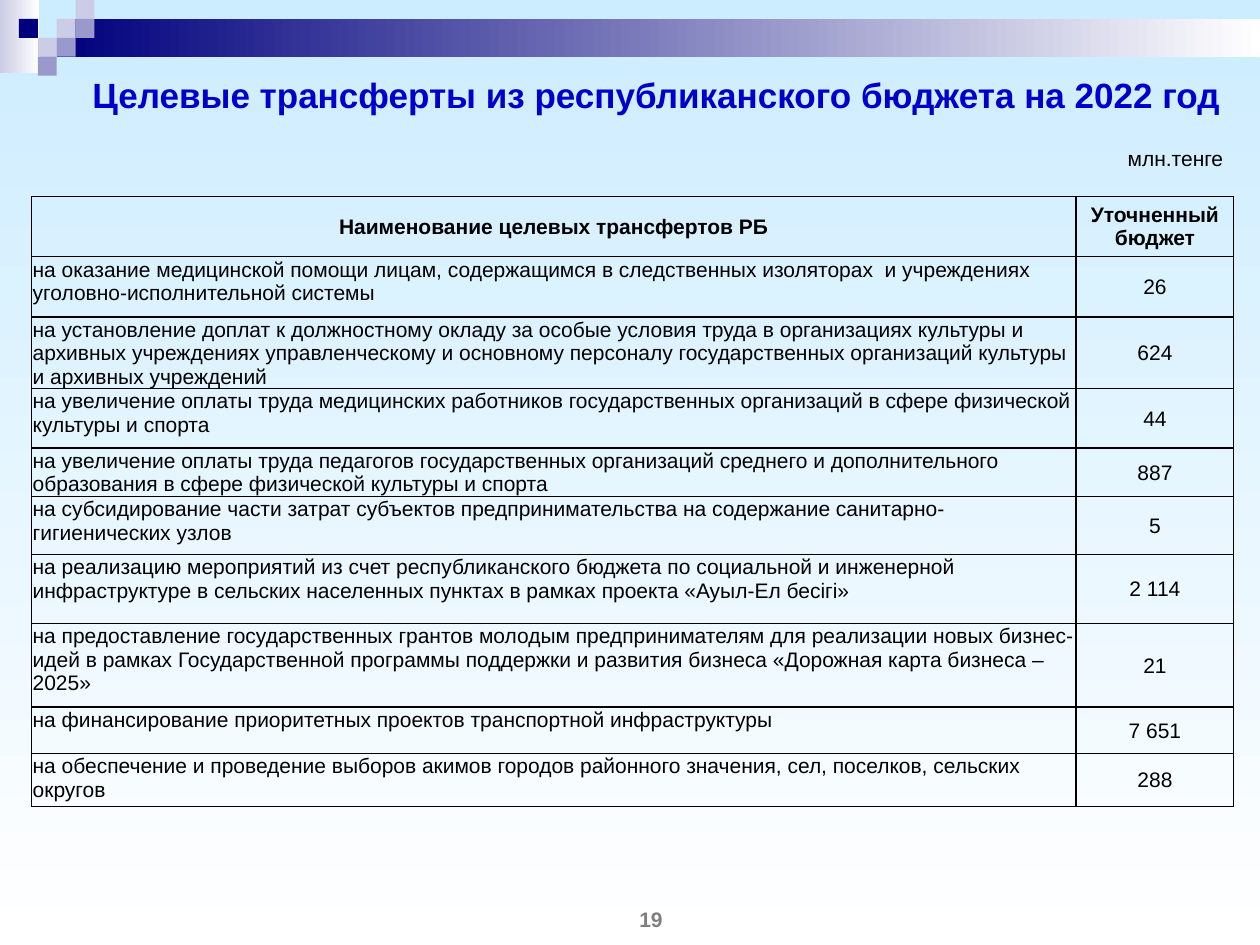
from lxml import etree
from pptx import Presentation
from pptx.dml.color import RGBColor
from pptx.enum import shapes, text
from pptx.oxml import ns
from pptx.util import Pt

SKY = RGBColor(0xCC, 0xEC, 0xFF)
WHITE = RGBColor(0xFF, 0xFF, 0xFF)
BLACK = RGBColor(0, 0, 0)
NAVY = RGBColor(0, 0, 0x7D)
LAVENDER = RGBColor(0xCC, 0xCC, 0xE6)
VIOLET = RGBColor(0x99, 0x99, 0xCC)
TITLE_BLUE = RGBColor(0, 0, 0xCC)
GRAY = RGBColor(0x7F, 0x7F, 0x7F)

SQUARE = 10.8
SQUARES = [
    (3, 1, LAVENDER), (4, 0, LAVENDER), (4, 1, VIOLET), (2, 2, LAVENDER),
    (1, 1, NAVY), (3, 2, VIOLET), (2, 3, VIOLET),
]

HEADER = ("Наименование целевых трансфертов РБ", "Уточненный бюджет", 34.3)
TRANSFERS = [
    ("на оказание медицинской помощи лицам, содержащимся в следственных изоляторах  и учреждениях "
     "уголовно-исполнительной системы", "26", 34.4),
    ("на установление доплат к должностному окладу за особые условия труда в организациях культуры и "
     "архивных учреждениях управленческому и основному персоналу государственных организаций культуры "
     "и архивных учреждений", "624", 41),
    ("на увеличение оплаты труда медицинских работников государственных организаций в сфере физической "
     "культуры и спорта", "44", 33.8),
    ("на увеличение оплаты труда педагогов государственных организаций среднего и дополнительного "
     "образования в сфере физической культуры и спорта", "887", 27.9),
    ("на субсидирование части затрат субъектов предпринимательства на содержание "
     "санитарно-гигиенических узлов", "5", 33.2),
    ("на реализацию мероприятий из счет республиканского бюджета по социальной и инженерной "
     "инфраструктуре в сельских населенных пунктах в рамках проекта «Ауыл-Ел бесігі»", "2 114", 39.2),
    ("на предоставление государственных грантов молодым предпринимателям для реализации новых "
     "бизнес-идей в рамках Государственной программы поддержки и развития бизнеса «Дорожная карта "
     "бизнеса – 2025»", "21", 48),
    ("на финансирование приоритетных проектов транспортной инфраструктуры", "7 651", 26.4),
    ("на обеспечение и проведение выборов акимов городов районного значения, сел, поселков, сельских "
     "округов", "288", 30.2),
]
COLUMN_WIDTHS = (597, 90)
HEADER_INSETS = (7.2, 3.6, 7.2, 3.6)
BODY_INSETS = (0.7, 0.7, 0.7, 0)


def set_gradient(fill, start, end, angle):
    fill.gradient()
    fill.gradient_angle = angle
    for stop, color in zip(fill.gradient_stops, (start, end)):
        stop.color.rgb = color


def add_block(slide, left, top, width, height, color, end_color=None):
    shape = slide.shapes.add_shape(
        shapes.MSO_SHAPE.RECTANGLE, Pt(left), Pt(top), Pt(width), Pt(height))
    shape.shadow.inherit = False
    shape.line.fill.background()
    if end_color is None:
        shape.fill.solid()
        shape.fill.fore_color.rgb = color
    else:
        set_gradient(shape.fill, color, end_color, 0)


def write_text(frame, content, size, color, bold=False, centered=True):
    frame.word_wrap = True
    paragraph = frame.paragraphs[0]
    paragraph.text = content
    paragraph.alignment = text.PP_ALIGN.CENTER if centered else text.PP_ALIGN.LEFT
    font = paragraph.font
    font.name, font.size, font.bold = "Arial", Pt(size), bold
    font.color.rgb = color


def add_label(slide, left, top, width, height, content, color, bold=False):
    label = slide.shapes.add_textbox(Pt(left), Pt(top), Pt(width), Pt(height))
    label.text_frame.vertical_anchor = text.MSO_ANCHOR.MIDDLE
    write_text(label.text_frame, content, 12, color, bold)


def add_title(slide, content):
    title = slide.shapes.title
    title.left, title.top, title.width, title.height = Pt(31.7), Pt(30.2), Pt(686.9), Pt(48.2)
    title.text_frame.vertical_anchor = text.MSO_ANCHOR.MIDDLE
    write_text(title.text_frame, content, 20, TITLE_BLUE, bold=True)


def add_borders(cell):
    properties = cell._tc.get_or_add_tcPr()
    for index, side in enumerate(("a:lnL", "a:lnR", "a:lnT", "a:lnB")):
        line = etree.Element(ns.qn(side), w=str(Pt(1)))
        fill = etree.SubElement(line, ns.qn("a:solidFill"))
        etree.SubElement(fill, ns.qn("a:srgbClr"), val=str(BLACK))
        properties.insert(index, line)


def fill_cell(cell, content, is_header, centered):
    write_text(cell.text_frame, content, 12, BLACK, is_header, centered)
    insets = HEADER_INSETS if is_header else BODY_INSETS
    cell.margin_left, cell.margin_top, cell.margin_right, cell.margin_bottom = map(Pt, insets)
    cell.vertical_anchor = text.MSO_ANCHOR.MIDDLE if centered else text.MSO_ANCHOR.TOP
    cell.fill.background()
    add_borders(cell)


def add_transfer_table(slide, left, top):
    rows = [HEADER] + TRANSFERS
    frame = slide.shapes.add_table(
        len(rows), len(COLUMN_WIDTHS), Pt(left), Pt(top),
        Pt(sum(COLUMN_WIDTHS)), Pt(sum(row[-1] for row in rows)))
    table = frame.table
    table.horz_banding = False
    for column, width in zip(table.columns, COLUMN_WIDTHS):
        column.width = Pt(width)
    for index, (name, amount, height) in enumerate(rows):
        is_header = index == 0
        table.rows[index].height = Pt(height)
        fill_cell(table.cell(index, 0), name, is_header, centered=is_header)
        fill_cell(table.cell(index, 1), amount, is_header, centered=True)


def add_decoration(slide):
    add_block(slide, 0, 0, 22.3, 41.8, LAVENDER, WHITE)
    add_block(slide, 3 * SQUARE, SQUARE, 720 - 3 * SQUARE, 2 * SQUARE, NAVY, WHITE)
    for column, row, color in SQUARES:
        add_block(slide, column * SQUARE, row * SQUARE, SQUARE, SQUARE, color)


def main():
    presentation = Presentation()
    presentation.slide_width, presentation.slide_height = Pt(720), Pt(540)
    slide = presentation.slides.add_slide(presentation.slide_layouts[5])
    set_gradient(slide.background.fill, SKY, WHITE, 270)
    add_decoration(slide)
    add_title(slide, "Целевые трансферты из республиканского бюджета на 2022 год")
    add_transfer_table(slide, 18, 112.4)
    add_label(slide, 622, 64, 99.4, 53.3, "млн.тенге", BLACK)
    add_label(slide, 300, 510, 144, 30, "19", GRAY, bold=True)
    presentation.save("out.pptx")


if __name__ == "__main__":
    main()
